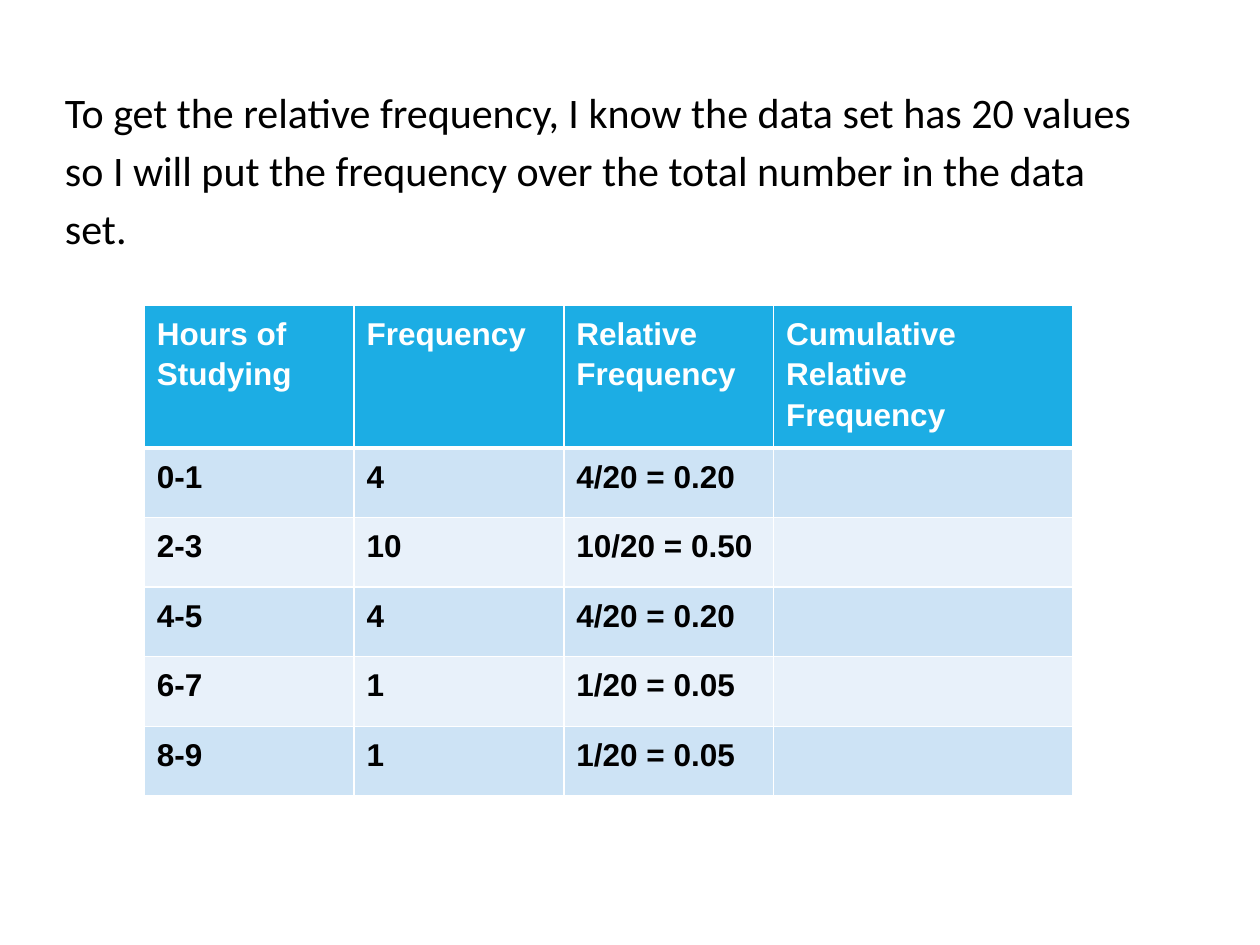
from lxml.etree import SubElement
from pptx import Presentation
from pptx.dml.color import RGBColor
from pptx.enum.text import MSO_AUTO_SIZE
from pptx.oxml.ns import qn
from pptx.util import Cm, Pt

COLORS = {
    "text": "000000",
    "header_text": "FFFFFF",
    "header": "1CADE4",
    "odd_row": "CDE3F5",
    "even_row": "E8F1FA",
    "border": "FFFFFF",
}

EXPLANATION = (
    "To get the relative frequency, I know the data set has 20 values so I will "
    "put the frequency over the total number in the data set."
)
HEADINGS = ["Hours of Studying", "Frequency", "Relative Frequency",
            "Cumulative Relative Frequency"]
FREQUENCIES = {"0-1": 4, "2-3": 10, "4-5": 4, "6-7": 1, "8-9": 1}
COLUMN_SHARES = [0.226, 0.226, 0.226, 0.322]
HEADER_HEIGHT = Cm(2.13)


def write(text_frame, wording, font_name, size, color, bold=False):
    text_frame.text = wording
    paragraph = text_frame.paragraphs[0]
    paragraph.line_spacing = 1.15
    paragraph.space_after = Pt(10)
    for run in paragraph.runs:
        run.font.name = font_name
        run.font.size = Pt(size)
        run.font.bold = bold
        run.font.color.rgb = RGBColor.from_string(COLORS[color])


def add_borders(cell, widths):
    """Draw cell borders; widths maps L, R, T, B, in that order, to points."""
    properties = cell._tc.get_or_add_tcPr()
    for side, width in widths.items():
        line = SubElement(properties, qn(f"a:ln{side}"), w=str(Pt(width)))
        fill = SubElement(line, qn("a:solidFill"))
        SubElement(fill, qn("a:srgbClr"), val=COLORS["border"])


def add_explanation(slide, left, top, width, height):
    explanation = slide.shapes.add_textbox(left, top, width, height).text_frame
    explanation.word_wrap = True
    explanation.auto_size = MSO_AUTO_SIZE.SHAPE_TO_FIT_TEXT
    write(explanation, EXPLANATION, "Calibri", 24, "text")


def add_frequency_table(slide, left, top, width, height):
    total = sum(FREQUENCIES.values())
    rows = [HEADINGS] + [
        [hours, str(count), f"{count}/{total} = {count / total:.2f}", ""]
        for hours, count in FREQUENCIES.items()
    ]
    table = slide.shapes.add_table(
        len(rows), len(HEADINGS), left, top, width, height).table
    for column, share in zip(table.columns, COLUMN_SHARES):
        column.width = int(width * share)

    row_height = (height - HEADER_HEIGHT) // len(FREQUENCIES)
    for r, row in enumerate(rows):
        is_header = r == 0
        table.rows[r].height = HEADER_HEIGHT if is_header else row_height
        fill = "header" if is_header else "odd_row" if r % 2 else "even_row"
        borders = {"L": 1, "R": 1, "T": 3 if r == 1 else 1, "B": 3 if is_header else 1}
        for c, wording in enumerate(row):
            cell = table.cell(r, c)
            add_borders(cell, borders)
            cell.fill.solid()
            cell.fill.fore_color.rgb = RGBColor.from_string(COLORS[fill])
            if wording:
                write(cell.text_frame, wording, "Arial", 18,
                      "header_text" if is_header else "text", bold=True)


def main():
    presentation = Presentation()
    presentation.slide_width = Cm(25.4)
    presentation.slide_height = Cm(19.05)
    slide = presentation.slides.add_slide(presentation.slide_layouts[6])
    add_explanation(slide, Cm(1.06), Cm(1.47), Cm(22.02), Cm(3.73))
    add_frequency_table(slide, Cm(2.91), Cm(6.15), Cm(18.71), Cm(9.14))
    presentation.save("out.pptx")


if __name__ == "__main__":
    main()
